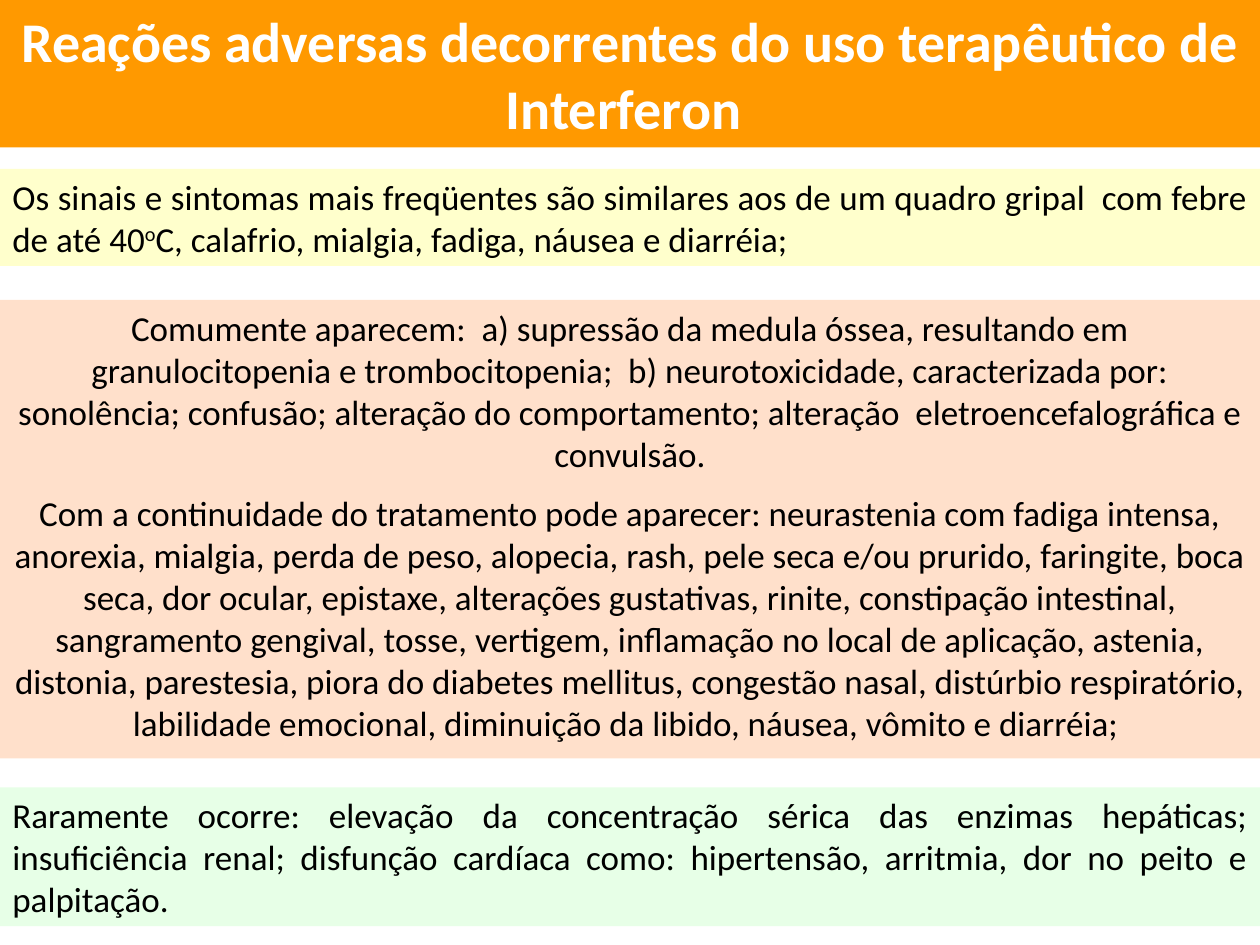
from pptx import Presentation
from pptx.dml.color import RGBColor
from pptx.enum.text import MSO_ANCHOR, MSO_AUTO_SIZE, PP_ALIGN
from pptx.util import Inches, Pt

SLIDE_W, SLIDE_H = 10, 7.5
FONT = "Calibri"

TITLE = "Reações adversas decorrentes do uso terapêutico de Interferon "
FREQUENT = [[
    "Os sinais e sintomas mais freqüentes são similares aos de um quadro gripal  com febre de até 40",
    ("o", 30),
    "C, calafrio, mialgia, fadiga, náusea e diarréia;",
]]
COMMON = [
    ["Comumente aparecem:  a) supressão da medula óssea, resultando em granulocitopenia e "
     "trombocitopenia;  b) neurotoxicidade, caracterizada por: sonolência; confusão; alteração "
     "do comportamento; alteração  eletroencefalográfica e convulsão."],
    ["Com a continuidade do tratamento pode aparecer: neurastenia com fadiga intensa, anorexia, "
     "mialgia, perda de peso, alopecia, rash, pele seca e/ou prurido, faringite, boca seca, dor "
     "ocular, epistaxe, alterações gustativas, rinite, constipação intestinal, sangramento "
     "gengival, tosse, vertigem, inflamação no local de aplicação, astenia, distonia, parestesia, "
     "piora do diabetes mellitus, congestão nasal, distúrbio respiratório, labilidade emocional, "
     "diminuição da libido, náusea, vômito e diarréia; "],
]
RARE = [[
    "Raramente ocorre: elevação da concentração sérica das enzimas hepáticas; insuficiência "
    "renal; disfunção cardíaca como: hipertensão, arritmia, dor no peito e palpitação."
]]

# paragraphs, top, height, fill, alignment
BANDS = [
    (FREQUENT, 1.34, 0.77, "FFFFCC", PP_ALIGN.JUSTIFY),
    (COMMON, 2.38, 3.64, "FFE0CB", PP_ALIGN.CENTER),
    (RARE, 6.25, 1.1, "E7FFE7", PP_ALIGN.JUSTIFY),
]


def set_fill(fill, color):
    fill.solid()
    fill.fore_color.rgb = RGBColor.from_string(color)


def write(sp, paragraphs, size=20, color="000000", bold=False, align=PP_ALIGN.CENTER):
    """Write paragraphs of runs; a run is a text or a (text, raised percent) pair."""
    tf = sp.text_frame
    tf.word_wrap = True
    tf.auto_size = MSO_AUTO_SIZE.NONE
    tf.vertical_anchor = MSO_ANCHOR.TOP
    for i, runs in enumerate(paragraphs):
        p = tf.add_paragraph() if i else tf.paragraphs[0]
        p.alignment = align
        p.space_before = Pt(size / 2 if i else 0)
        for run in runs:
            text, raised = (run, 0) if isinstance(run, str) else run
            r = p.add_run()
            r.text = text
            r.font.name = FONT
            r.font.size = Pt(size)
            r.font.bold = bold
            set_fill(r.font.fill, color)
            if raised:
                r.font._element.set("baseline", str(raised * 1000))


def place(sp, top, height, color):
    """Lay a filled band across the whole slide."""
    sp.left, sp.top = Inches(0), Inches(top)
    sp.width, sp.height = Inches(SLIDE_W), Inches(height)
    set_fill(sp.fill, color)


prs = Presentation()
prs.slide_width, prs.slide_height = Inches(SLIDE_W), Inches(SLIDE_H)
s = prs.slides.add_slide(prs.slide_layouts[5])

title = s.shapes.title
place(title, 0, 1.17, "FF9900")
write(title, [[TITLE]], size=32, color="FFFFFF", bold=True)

for paragraphs, top, height, color, align in BANDS:
    sp = s.shapes.add_textbox(0, 0, 0, 0)
    place(sp, top, height, color)
    write(sp, paragraphs, align=align)

prs.save("out.pptx")
